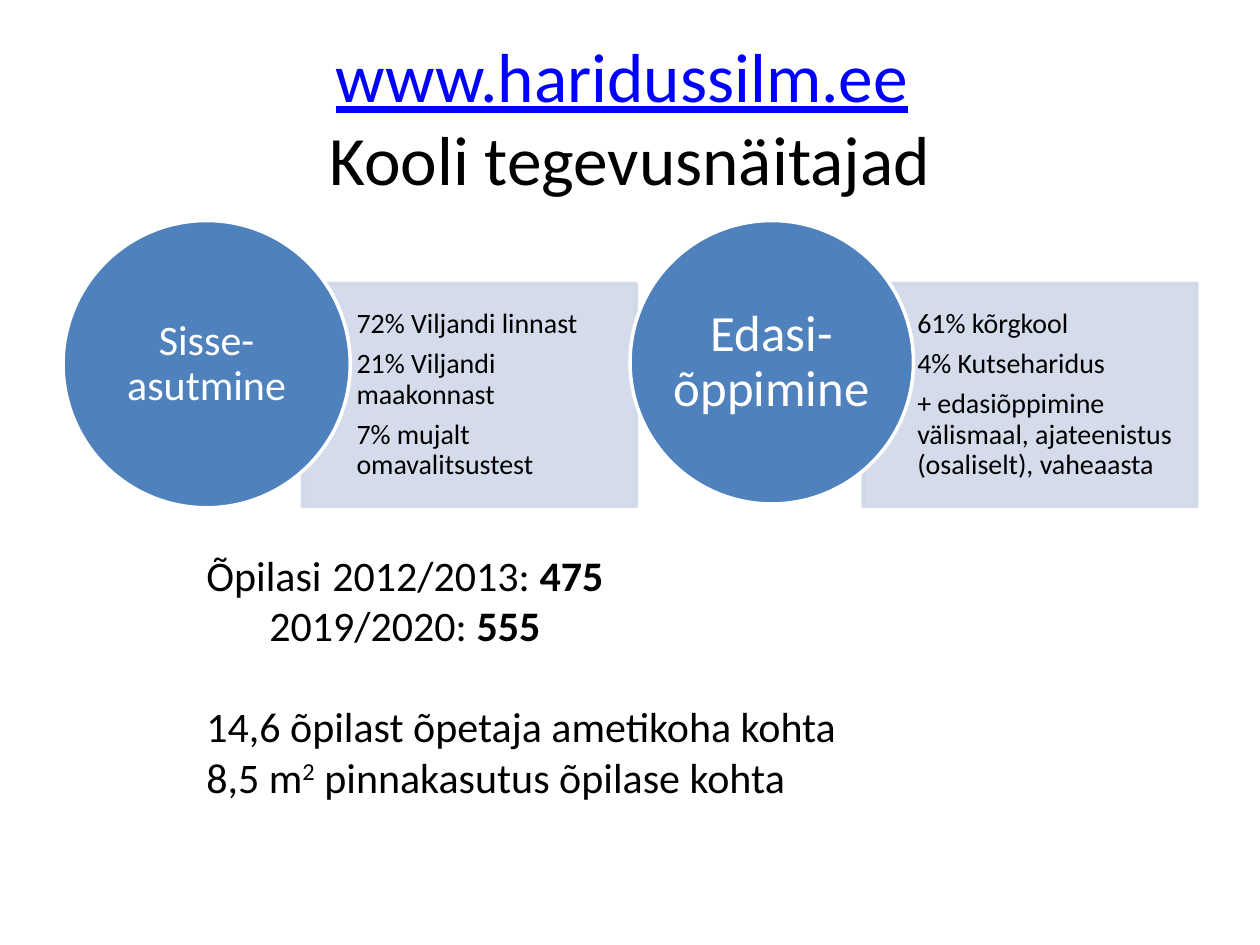
import pptx
import pptx.util
import pptx.dml.color
import pptx.enum.dml
import pptx.enum.shapes
import pptx.enum.text
import pptx.oxml
import pptx.oxml.ns
import lxml.etree

Inches = pptx.util.Inches
Pt = pptx.util.Pt
RGBColor = pptx.dml.color.RGBColor
SHAPE = pptx.enum.shapes.MSO_SHAPE
ALIGN = pptx.enum.text.PP_ALIGN
ANCHOR = pptx.enum.text.MSO_ANCHOR

BLACK = RGBColor(0x00, 0x00, 0x00)
WHITE = RGBColor(0xFF, 0xFF, 0xFF)
LINK_BLUE = RGBColor(0x00, 0x00, 0xFF)
CIRCLE_BLUE = RGBColor(0x4F, 0x81, 0xBD)
PANEL_BLUE = RGBColor(0xD0, 0xD8, 0xE8)

FONT = "Calibri"
WIDTH, HEIGHT = 10, 7.5
MARGIN = WIDTH * 0.05
PANEL_WIDTH, PANEL_HEIGHT = 2.65, 1.77
PANEL_TOP = HEIGHT * 0.3
CIRCLE_TOP = PANEL_TOP - MARGIN

TOPICS = [
    (MARGIN, 2.28, "Sisse-asutmine", 24, 2.4,
     ["72% Viljandi linnast", "21% Viljandi maakonnast",
      "7% mujalt omavalitsustest"]),
    (WIDTH / 2, 2.25, "Edasi-õppimine", 29, WIDTH - MARGIN - PANEL_WIDTH,
     ["61% kõrgkool", "4% Kutseharidus",
      "+ edasiõppimine välismaal, ajateenistus (osaliselt), vaheaasta"]),
]

FIGURES = [
    [("Õpilasi \t2012/2013: ", ""), ("475", "bold")],
    [("\t2019/2020: ", ""), ("555", "bold")],
    [("14,6 õpilast õpetaja ametikoha kohta", "")],
    [("8,5 m", ""), ("2", "super"), (" pinnakasutus õpilase kohta", "")],
]


def add_run(paragraph, text, size, color=BLACK, style=""):
    run = paragraph.add_run()
    run.text = text
    run.font.name = FONT
    run.font.size = Pt(size)
    run.font.color.rgb = color
    if style == "bold":
        run.font.bold = True
    elif style == "link":
        run.font.underline = True
    elif style == "super":
        run.font._element.set("baseline", "30000")


def set_frame(frame, anchor, insets):
    frame.word_wrap = True
    frame.vertical_anchor = anchor
    (frame.margin_left, frame.margin_top,
     frame.margin_right, frame.margin_bottom) = map(Inches, insets)


def next_paragraph(frame, index):
    return frame.add_paragraph() if index else frame.paragraphs[0]


def make_translucent(shape, percent):
    tag = pptx.oxml.ns.qn("a:srgbClr")
    for color in shape._element.spPr.iter(tag):
        alpha = lxml.etree.SubElement(color, pptx.oxml.ns.qn("a:alpha"))
        alpha.set("val", str(percent * 1000))


def add_labelled_shape(slide, kind, box, fill, line, lines, size, color,
                       align, insets):
    shape = slide.shapes.add_shape(kind, *map(Inches, box))
    shape.shadow.inherit = False
    shape.fill.solid()
    shape.fill.fore_color.rgb = fill
    shape.line.color.rgb = line
    shape.line.width = Pt(2)
    set_frame(shape.text_frame, ANCHOR.MIDDLE, insets)
    for index, text in enumerate(lines):
        paragraph = next_paragraph(shape.text_frame, index)
        paragraph.alignment = align
        paragraph.line_spacing = 0.9
        paragraph.space_after = Pt(round(size * 0.35, 1))
        add_run(paragraph, text, size, color)
    return shape


def add_topic(slide, left, diameter, label, label_size, panel_left, facts):
    panel = add_labelled_shape(
        slide, SHAPE.RECTANGLE,
        (panel_left, PANEL_TOP, PANEL_WIDTH, PANEL_HEIGHT),
        PANEL_BLUE, PANEL_BLUE, facts, 16, BLACK, ALIGN.LEFT,
        (0.43, 0.12, 0.12, 0.12))
    make_translucent(panel, 90)
    add_labelled_shape(
        slide, SHAPE.OVAL, (left, CIRCLE_TOP, diameter, diameter),
        CIRCLE_BLUE, WHITE, [label], label_size, WHITE, ALIGN.CENTER,
        (0, 0, 0, 0))


def add_text_area(slide, box, anchor):
    frame = slide.shapes.add_textbox(*map(Inches, box)).text_frame
    set_frame(frame, anchor, (0.1, 0.05, 0.1, 0.05))
    return frame


def add_title(slide):
    box = (MARGIN, HEIGHT * 0.04, WIDTH - 2 * MARGIN, HEIGHT / 6)
    heading = add_text_area(slide, box, ANCHOR.MIDDLE).paragraphs[0]
    heading.alignment = ALIGN.CENTER
    add_run(heading, "www.haridussilm.ee", 39.6, LINK_BLUE, "link")
    add_run(heading, " ", 39.6)
    heading.add_line_break()
    add_run(heading, "Kooli tegevusnäitajad", 39.6)


def add_figures(slide):
    frame = add_text_area(slide, (1.54, 4.31, 6.93, 2.42), ANCHOR.TOP)
    for index, pieces in enumerate(FIGURES):
        paragraph = next_paragraph(frame, index)
        if index == 2:
            paragraph.space_before = Pt(29)
        for text, style in pieces:
            add_run(paragraph, text, 24, BLACK, style)


def main():
    deck = pptx.Presentation()
    deck.slide_width = Inches(WIDTH)
    deck.slide_height = Inches(HEIGHT)
    slide = deck.slides.add_slide(deck.slide_layouts[6])
    add_title(slide)
    for topic in TOPICS:
        add_topic(slide, *topic)
    add_figures(slide)
    deck.save("out.pptx")


if __name__ == "__main__":
    main()
